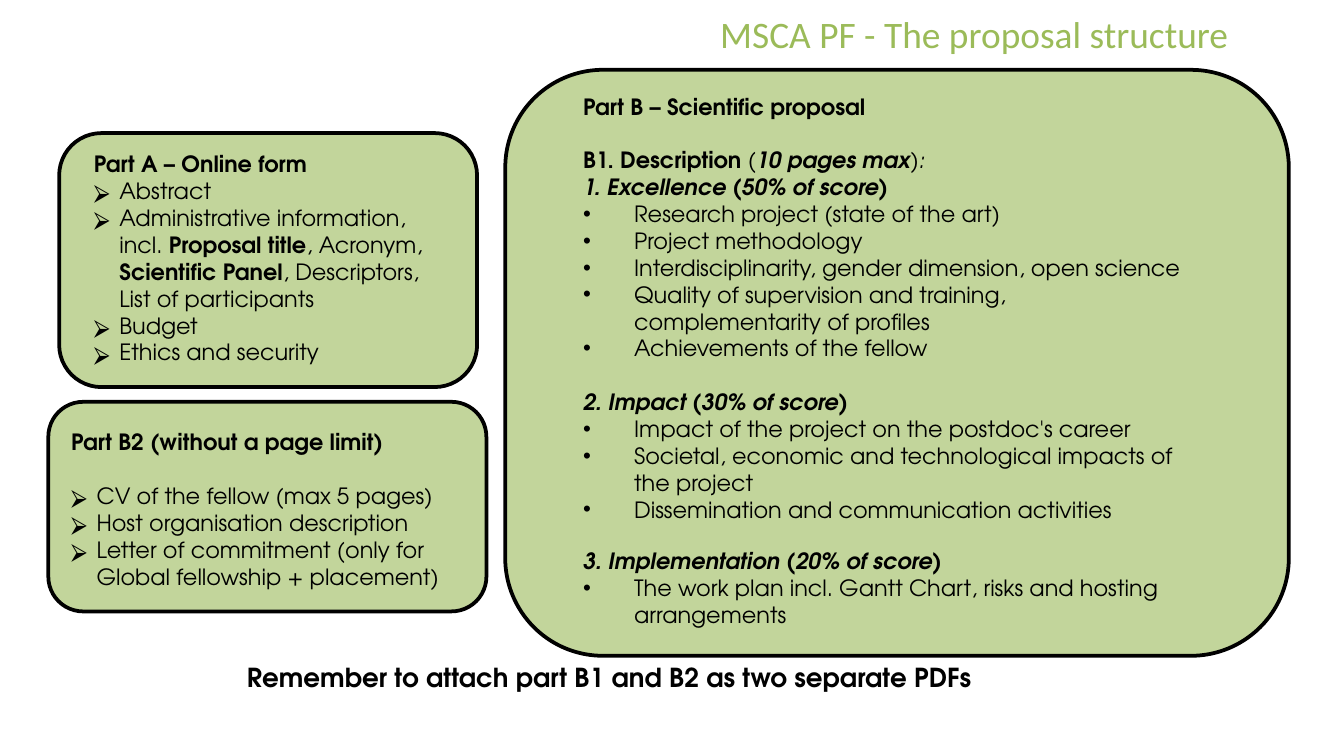
from lxml.etree import SubElement
from pptx import Presentation
from pptx.dml.color import RGBColor
from pptx.enum.shapes import MSO_SHAPE
from pptx.enum.text import MSO_ANCHOR, PP_ALIGN
from pptx.oxml.ns import qn
from pptx.util import Pt

PX = 9144  # 100 px to the inch
THEME = {
    "ink": RGBColor.from_string("000000"),
    "green": RGBColor.from_string("9BBB59"),
    "panel": RGBColor.from_string("C2D59B"),
    "head": "Calibri", "body": "TeX Gyre Adventor",
    "marks": {"⮚": "Noto Sans Symbols", "•": "Arial"},
    "title": 20, "text": 12, "note": 14, "line": 2,
}


def add_run(para, text, style="", size="text", font="body", color="ink"):
    run = para.add_run()
    run.text = text
    run.font.size = Pt(THEME[size])
    run.font.name = THEME[font]
    run.font.color.rgb = THEME[color]
    run.font.bold = "b" in style
    run.font.italic = "i" in style


def add_mark(para, mark, indent):
    props = para._p.get_or_add_pPr()
    props.set("marL", str(indent * PX))
    props.set("indent", str(-indent * PX))
    color = SubElement(props, qn("a:buClr"))
    SubElement(color, qn("a:srgbClr")).set("val", str(THEME["ink"]))
    SubElement(props, qn("a:buFont")).set("typeface", THEME["marks"][mark])
    SubElement(props, qn("a:buChar")).set("char", mark)


deck = Presentation()
deck.slide_width = 1000 * PX
deck.slide_height = deck.slide_width * 9 // 16
slide = deck.slides.add_slide(deck.slide_layouts[6])

# Panels: frame, text area, bullet, indent, grouped, lines
# A line is (kind, space before in points, runs); kind "*" is a bullet
panels = [
    ((44, 99, 311, 189), (60, 107, 278, 172), "⮚", 19, True, [
        ("", 0, [("Part A – Online form", "b")]),
        ("*", 0, [("Abstract", "")]),
        ("*", 0, [("Administrative information, incl. ", ""),
                  ("Proposal title", "b"), (", Acronym, ", ""),
                  ("Scientific Panel", "b"),
                  (", Descriptors, List of participants", "")]),
        ("*", 0, [("Budget", "")]),
        ("*", 0, [("Ethics and security", "")]),
    ]),
    ((376, 52, 583, 436), (424, 64, 469, 412), "•", 38, False, [
        ("", 0, [("Part B – Scientific proposal", "b")]),
        ("", 14.4, [("B1. Description ", "b"), ("(", "i"),
                    ("10 pages max", "bi"), ("):", "i")]),
        ("", 0, [("1. Excellence (50% of score)", "bi")]),
        ("*", 0, [("Research project (state of the art)", "")]),
        ("*", 0, [("Project methodology", "")]),
        ("*", 0, [("Interdisciplinarity, gender dimension, open science", "")]),
        ("*", 0, [("Quality of supervision and training, "
                   "complementarity of profiles", "")]),
        ("*", 0, [("Achievements of the fellow", "")]),
        ("", 14.4, [("2. Impact (30% of score)", "bi")]),
        ("*", 0, [("Impact of the project on the postdoc's career", "")]),
        ("*", 0, [("Societal, economic and technological impacts "
                   "of the project", "")]),
        ("*", 0, [("Dissemination and communication activities", "")]),
        ("", 13.2, [("3. Implementation (20% of score)", "bi")]),
        ("*", 0, [("The work plan incl. Gantt Chart, risks and hosting "
                   "arrangements", "")]),
    ]),
    ((36, 299, 326, 156), (43, 314, 312, 130), "⮚", 19, True, [
        ("", 0, [("Part B2 (without a page limit)", "b")]),
        ("*", 14.4, [("CV of the fellow (max 5 pages)", "")]),
        ("*", 0, [("Host organisation description", "")]),
        ("*", 0, [("Letter of commitment (only for Global fellowship "
                   "+ placement)", "")]),
    ]),
]

for frame, area, mark, indent, grouped, lines in panels:
    home = slide.shapes.add_group_shape().shapes if grouped else slide.shapes
    card = home.add_shape(MSO_SHAPE.ROUNDED_RECTANGLE, *[n * PX for n in frame])
    card.line.color.rgb = THEME["ink"]
    card.line.width = Pt(THEME["line"])
    body = home.add_shape(MSO_SHAPE.RECTANGLE, *[n * PX for n in area])
    body.line.fill.background()
    for shape in (card, body):
        shape.shadow.inherit = False
        shape.fill.solid()
        shape.fill.fore_color.rgb = THEME["panel"]

    words = body.text_frame
    words.word_wrap = True
    words.vertical_anchor = MSO_ANCHOR.TOP
    for i, (kind, gap, runs) in enumerate(lines):
        para = words.add_paragraph() if i else words.paragraphs[0]
        para.alignment = PP_ALIGN.LEFT
        if gap:
            para.space_before = Pt(gap)
        if kind == "*":
            add_mark(para, mark, indent)
        for text, style in runs:
            add_run(para, text, style)

# Title and closing note
labels = [
    ((24, -22, 900, 94), 5, MSO_ANCHOR.MIDDLE, PP_ALIGN.RIGHT,
     ("MSCA PF - The proposal structure", "", "title", "head", "green")),
    ((13, 482, 881, 44), 10, MSO_ANCHOR.TOP, PP_ALIGN.CENTER,
     ("Remember to attach part B1 and B2 as two separate PDFs", "b", "note")),
]
for area, inset, anchor, align, run in labels:
    box = slide.shapes.add_textbox(*[n * PX for n in area]).text_frame
    box.word_wrap = True
    box.vertical_anchor = anchor
    box.margin_top = box.margin_bottom = inset * PX
    box.paragraphs[0].alignment = align
    add_run(box.paragraphs[0], *run)

deck.save("out.pptx")
